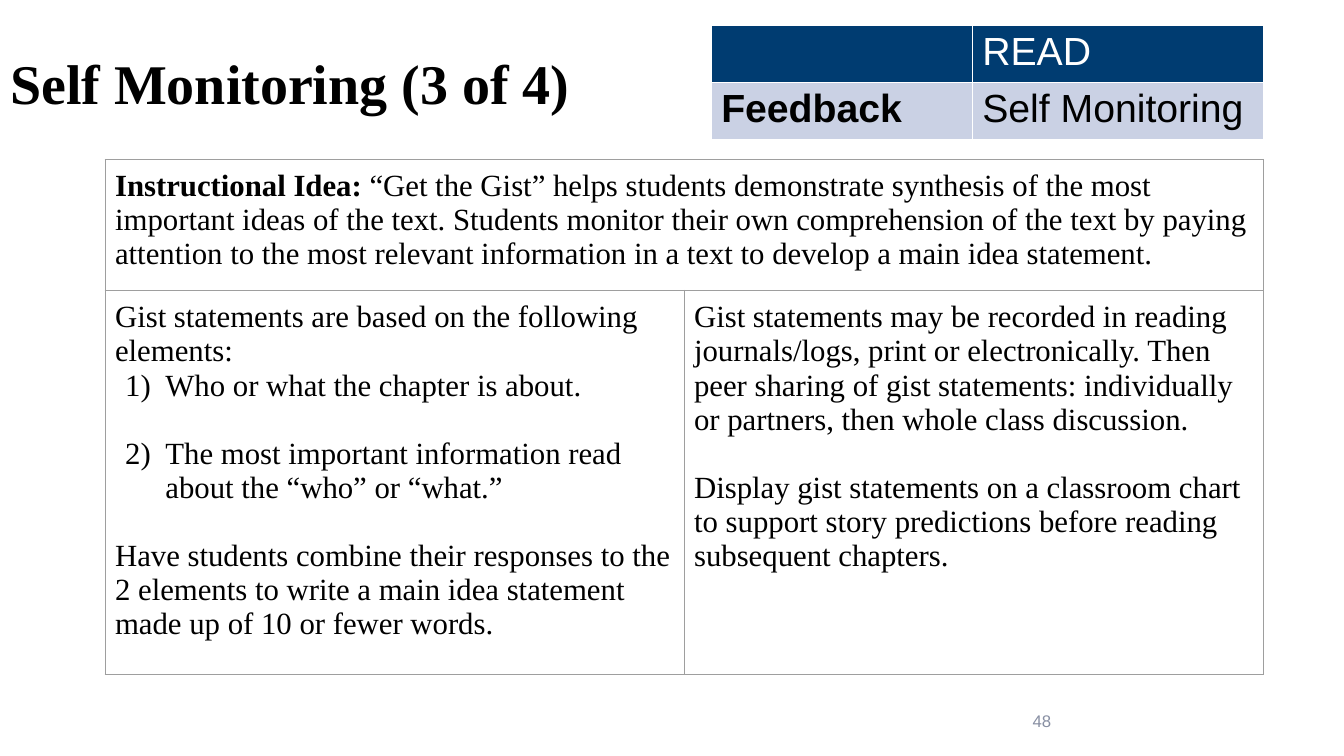
import dataclasses

import pptx
import pptx.dml.color
import pptx.enum.text
import pptx.oxml.ns
import pptx.util
from lxml import etree

Pt = pptx.util.Pt


@dataclasses.dataclass(frozen=True)
class Theme:
    serif: str = "Times New Roman"
    sans: str = "Arial"
    black: str = "000000"
    white: str = "FFFFFF"
    navy: str = "003C71"
    pale: str = "CAD1E4"
    rule: str = "9E9E9E"
    muted: str = "888FA3"
    title: float = 40
    label: float = 28
    body: float = 22
    number: float = 12
    paragraph_gap: float = 24.4


class SlideBuilder:
    def __init__(self, page, theme):
        self.page = page
        self.theme = theme

    def style(self, item, font, size, color, bold=False):
        item.font.name = font
        item.font.size = Pt(size)
        item.font.bold = bold
        item.font.color.rgb = pptx.dml.color.RGBColor.from_string(color)

    def place(self, box, left, top, width, height):
        box.left, box.top, box.width, box.height = map(Pt, (left, top, width, height))

    def title(self, text, *bounds):
        box = self.page.shapes.title
        self.place(box, *bounds)
        frame = box.text_frame
        frame.text = text
        frame.auto_size = pptx.enum.text.MSO_AUTO_SIZE.NONE
        frame.vertical_anchor = pptx.enum.text.MSO_ANCHOR.MIDDLE
        para = frame.paragraphs[0]
        para.alignment = pptx.enum.text.PP_ALIGN.LEFT
        self.style(para.runs[0], self.theme.serif, self.theme.title, self.theme.black, True)

    def page_number(self, text, *bounds):
        frame = self.page.shapes.add_textbox(*map(Pt, bounds)).text_frame
        frame.text = text
        frame.word_wrap = True
        frame.vertical_anchor = pptx.enum.text.MSO_ANCHOR.MIDDLE
        para = frame.paragraphs[0]
        para.alignment = pptx.enum.text.PP_ALIGN.RIGHT
        self.style(para.runs[0], self.theme.sans, self.theme.number, self.theme.muted)

    def table(self, left, top, widths, heights, border, border_width, margin):
        frame = self.page.shapes.add_table(
            len(heights), len(widths), Pt(left), Pt(top), Pt(sum(widths)), Pt(sum(heights)))
        grid = frame.table
        grid.first_row = grid.horz_banding = False
        for column, width in zip(grid.columns, widths):
            column.width = Pt(width)
        for row, height in zip(grid.rows, heights):
            row.height = Pt(height)
        for cell in grid.iter_cells():
            self.borders(cell, border, border_width)
            cell.fill.background()
            cell.margin_top = cell.margin_bottom = Pt(margin)
            cell.margin_left = cell.margin_right = Pt(7.2)
        return grid

    def borders(self, cell, color, width):
        qn = pptx.oxml.ns.qn
        properties = cell._tc.get_or_add_tcPr()
        for side in ("a:lnL", "a:lnR", "a:lnT", "a:lnB"):
            line = etree.SubElement(properties, qn(side), w=str(Pt(width)))
            fill = etree.SubElement(line, qn("a:solidFill"))
            etree.SubElement(fill, qn("a:srgbClr"), val=color)

    def label(self, cell, text, fill, color, bold=False):
        cell.fill.solid()
        cell.fill.fore_color.rgb = pptx.dml.color.RGBColor.from_string(fill)
        cell.text_frame.text = text
        para = cell.text_frame.paragraphs[0]
        for item in (para, *para.runs):
            self.style(item, self.theme.sans, self.theme.label, color, bold)

    def passage(self, cell, text, gap=False, numbered=False, lead=""):
        frame = cell.text_frame
        para = frame.add_paragraph() if frame.text else frame.paragraphs[0]
        for words in filter(None, (lead, text)):
            span = para.add_run()
            span.text = words
            self.style(span, self.theme.serif, self.theme.body, self.theme.black, words == lead)
        if gap:
            para.space_before = Pt(self.theme.paragraph_gap)
        if numbered:
            properties = para._p.get_or_add_pPr()
            properties.set("marL", str(Pt(36)))
            properties.set("indent", str(Pt(-28.8)))
            etree.SubElement(properties, pptx.oxml.ns.qn("a:buFont"), typeface=self.theme.serif)
            etree.SubElement(properties, pptx.oxml.ns.qn("a:buAutoNum"), type="arabicParenR")


def main():
    deck = pptx.Presentation()
    deck.slide_width, deck.slide_height = Pt(960), Pt(540)
    theme = Theme()
    slide = SlideBuilder(deck.slides.add_slide(deck.slide_layouts[5]), theme)

    slide.title("Self Monitoring (3 of 4)", 0, 6.5, 828, 104.4)
    slide.page_number("48", 678, 500.4, 80, 28.8)

    topic = slide.table(508, 18, (186.5, 208), (38.5, 38.5), theme.white, 1, 3.6)
    slide.label(topic.cell(0, 0), "", theme.navy, theme.white)
    slide.label(topic.cell(0, 1), "READ", theme.navy, theme.white)
    slide.label(topic.cell(1, 0), "Feedback", theme.pale, theme.black, True)
    slide.label(topic.cell(1, 1), "Self Monitoring", theme.pale, theme.black)

    lesson = slide.table(75, 113.8, (413.6, 413.6), (93.6, 258), theme.rule, 0.75, 7.2)
    idea, elements, sharing = lesson.cell(0, 0), lesson.cell(1, 0), lesson.cell(1, 1)
    idea.merge(lesson.cell(0, 1))
    slide.passage(
        idea,
        " “Get the Gist” helps students demonstrate synthesis of the most important ideas of "
        "the text. Students monitor their own comprehension of the text by paying attention to "
        "the most relevant information in a text to develop a main idea statement.",
        lead="Instructional Idea:")
    slide.passage(elements, "Gist statements are based on the following elements:")
    slide.passage(elements, "Who or what the chapter is about.", numbered=True)
    slide.passage(
        elements, "The most important information read about the “who” or “what.”",
        gap=True, numbered=True)
    slide.passage(
        elements,
        "Have students combine their responses to the 2 elements to write a main idea "
        "statement made up of 10 or fewer words.", gap=True)
    slide.passage(
        sharing,
        "Gist statements may be recorded in reading journals/logs, print or electronically. "
        "Then peer sharing of gist statements: individually or partners, then whole class "
        "discussion.")
    slide.passage(
        sharing,
        "Display gist statements on a classroom chart to support story predictions before "
        "reading subsequent chapters.", gap=True)

    deck.save("out.pptx")


if __name__ == "__main__":
    main()
